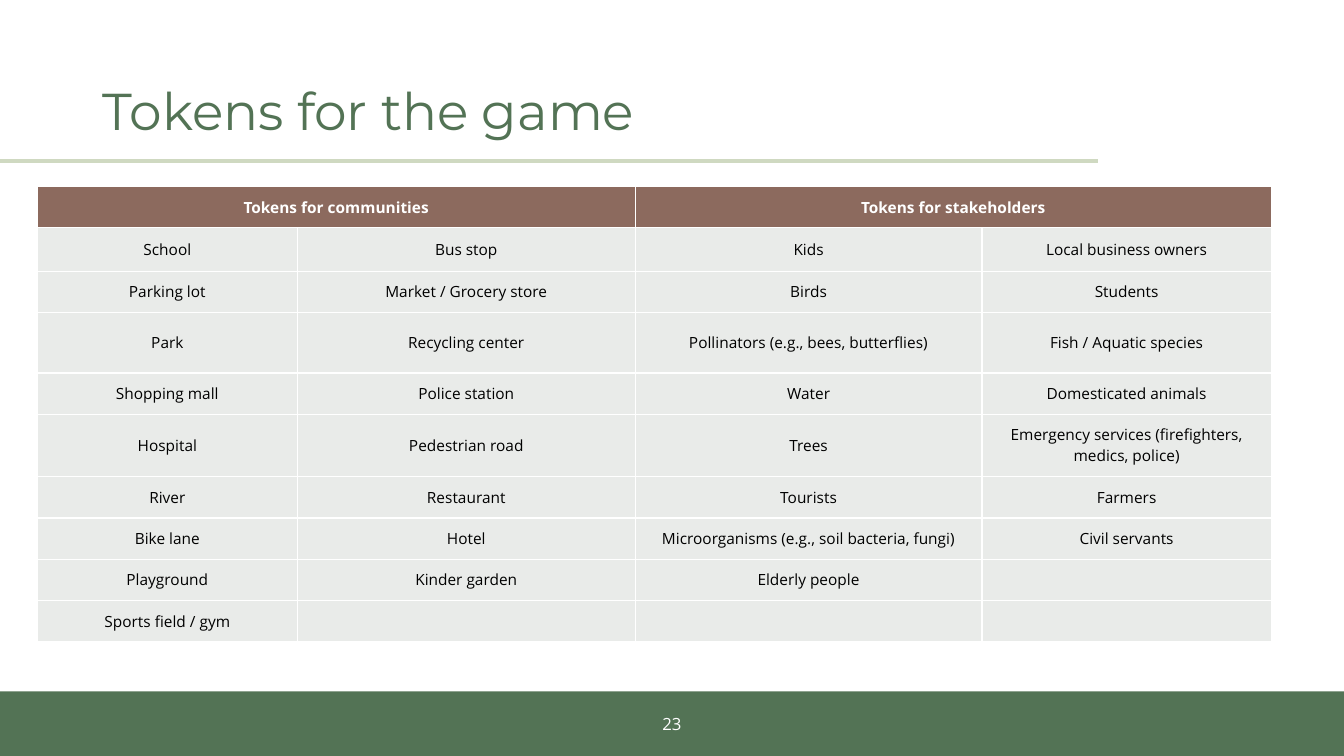
"""Build the slide that lists the community and stakeholder tokens of the game."""
from lxml.etree import SubElement
from pptx import Presentation
from pptx.dml.color import RGBColor
from pptx.enum.shapes import MSO_CONNECTOR, MSO_SHAPE
from pptx.enum.text import MSO_ANCHOR as Anchor, PP_ALIGN as Align
from pptx.oxml import parse_xml
from pptx.oxml.ns import nsdecls, qn
from pptx.util import Inches, Pt

TITLE = "Tokens for the game"
PAGE = "23"
GROUPS = ("Tokens for communities", "Tokens for stakeholders")
TOKENS = (
    ("School", "Bus stop", "Kids", "Local business owners"),
    ("Parking lot", "Market / Grocery store", "Birds", "Students"),
    ("Park", "Recycling center", "Pollinators (e.g., bees, butterflies)", "Fish / Aquatic species"),
    ("Shopping mall", "Police station", "Water", "Domesticated animals"),
    ("Hospital", "Pedestrian road", "Trees", "Emergency services (firefighters, medics, police)"),
    ("River", "Restaurant", "Tourists", "Farmers"),
    ("Bike lane", "Hotel", "Microorganisms (e.g., soil bacteria, fungi)", "Civil servants"),
    ("Playground", "Kinder garden", "Elderly people", ""),
    ("Sports field / gym", "", "", ""),
)

GREEN = RGBColor(0x53, 0x73, 0x55)
SAGE = RGBColor(0xCF, 0xD9, 0xC1)
BROWN = RGBColor(0x8C, 0x6A, 0x5E)
MIST = RGBColor(0xE9, 0xEB, 0xE9)
WHITE = RGBColor(0xFF, 0xFF, 0xFF)
BLACK = RGBColor(0, 0, 0)

WIDTH, HEIGHT = 13.33, 7.5
COLUMNS = (2.58, 3.35, 3.44, 2.87)
ROW = 0.41
ROW_EXCEPTIONS = {1: 0.43, 3: 0.6, 5: 0.62}
TITLE_FONT = {"name": "Montserrat", "size": Pt(37)}
PAGE_FONT = {"name": "Open Sans", "size": Pt(12)}
HEADER_FONT = {"name": "Open Sans", "size": Pt(11), "bold": True}
TOKEN_FONT = {**HEADER_FONT, "bold": False}
NO_MARGINS = dict.fromkeys(("margin_left", "margin_top", "margin_right", "margin_bottom"), 0)
MARGINS = dict.fromkeys(NO_MARGINS, Inches(0.1))


def apply(target, values):
    for name, value in values.items():
        setattr(target, name, value)


def write(frame, text, font, color, align=Align.CENTER):
    paragraph = frame.paragraphs[0]
    paragraph.alignment = align
    run = paragraph.add_run()
    run.text = text
    apply(run.font, font)
    run.font.color.rgb = color
    return paragraph


def dress(cell, fill, margins):
    apply(cell, {**margins, "vertical_anchor": Anchor.MIDDLE})
    properties = cell._tc.get_or_add_tcPr()
    for side in ("lnL", "lnR", "lnT", "lnB"):
        properties.append(parse_xml(
            f'<a:{side} {nsdecls("a")} w="{Pt(1)}"><a:solidFill>'
            f'<a:srgbClr val="{WHITE}"/></a:solidFill></a:{side}>'))
    cell.fill.solid()
    cell.fill.fore_color.rgb = fill


def add_footer(shapes):
    top = 6.86
    band = shapes.add_shape(MSO_SHAPE.RECTANGLE, 0, Inches(top), Inches(WIDTH), Inches(HEIGHT - top))
    band.shadow.inherit = False
    band.fill.solid()
    band.fill.fore_color.rgb = GREEN
    band.line.fill.background()
    page = shapes.add_textbox(Inches((WIDTH - 3) / 2), Inches(6.98), Inches(3), Inches(0.4))
    apply(page.text_frame, {"word_wrap": True, "vertical_anchor": Anchor.MIDDLE})
    write(page.text_frame, PAGE, PAGE_FONT, WHITE)


def add_rule(shapes):
    rule = shapes.add_connector(MSO_CONNECTOR.STRAIGHT, 0, Inches(1.6), Inches(10.89), Inches(1.6))
    rule.line.color.rgb = SAGE
    rule.line.width = Pt(3)
    SubElement(rule._element.spPr, qn("a:effectLst"))


def add_tokens(shapes):
    heights = [ROW_EXCEPTIONS.get(row, ROW) for row in range(len(TOKENS) + 1)]
    table = shapes.add_table(
        len(heights), len(COLUMNS), Inches(0.37), Inches(1.85),
        Inches(sum(COLUMNS)), Inches(sum(heights))).table
    table.horz_banding = False
    for column, width in zip(table.columns, COLUMNS):
        column.width = Inches(width)
    for row, height in zip(table.rows, heights):
        row.height = Inches(height)
    headers = [text for group in GROUPS for text in (group, "")]
    for row, texts in enumerate((headers, *TOKENS)):
        fill, font, color = (MIST, TOKEN_FONT, BLACK) if row else (BROWN, HEADER_FONT, WHITE)
        for column, text in enumerate(texts):
            cell = table.cell(row, column)
            dress(cell, fill, MARGINS if text else NO_MARGINS)
            if text:
                write(cell.text_frame, text, font, color)
    for column in range(0, len(COLUMNS), 2):
        table.cell(0, column).merge(table.cell(0, column + 1))


def main():
    deck = Presentation()
    apply(deck, {"slide_width": Inches(WIDTH), "slide_height": Inches(HEIGHT)})
    shapes = deck.slides.add_slide(deck.slide_layouts[5]).shapes
    title = shapes.title
    apply(title, {"left": Inches(0.92), "top": Inches(0.4), "width": Inches(11.5), "height": Inches(1.45)})
    title.text_frame.vertical_anchor = Anchor.MIDDLE
    write(title.text_frame, TITLE, TITLE_FONT, GREEN, Align.LEFT).line_spacing = 0.9
    add_footer(shapes)
    add_rule(shapes)
    add_tokens(shapes)
    deck.save("out.pptx")


if __name__ == "__main__":
    main()
